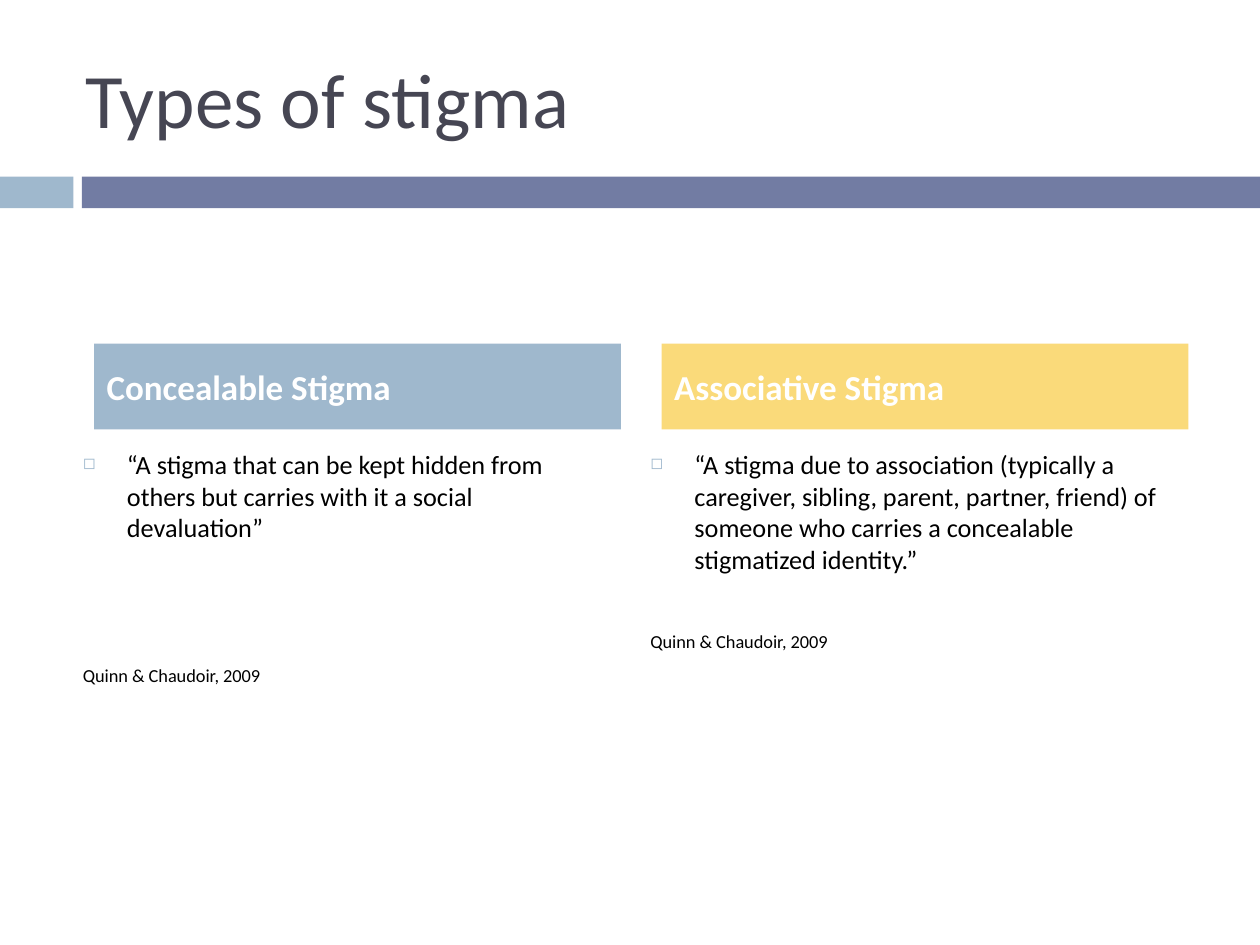
from lxml.etree import SubElement
from pptx import Presentation
from pptx.dml.color import RGBColor as Rgb
from pptx.enum.shapes import MSO_SHAPE as Kind
from pptx.enum.text import MSO_ANCHOR as Anchor, PP_ALIGN as Align
from pptx.oxml.ns import qn
from pptx.util import Cm, Pt

FONT = "Calibri"
BLUE, PLUM, GOLD = "9FB8CD", "727CA3", "FADA7A"
INK, BLACK, WHITE = "464653", "000000", "FFFFFF"
CITE = "Quinn & Chaudoir, 2009"
COLS = [
    (1.9, BLUE, "Concealable Stigma",
     "“A stigma that can be kept hidden from others but carries with it "
     "a social devaluation”", 69),
    (13.34, GOLD, "Associative Stigma",
     "“A stigma due to association (typically a caregiver, sibling, parent, "
     "partner, friend) of someone who carries a concealable stigmatized "
     "identity.”", 32),
]


def color(code):
    """Turn a hex string into a colour."""
    return Rgb.from_string(code)


def add_bar(slide, x, y, wide, high, fill):
    """Add a plain filled rectangle."""
    bar = slide.shapes.add_shape(Kind.RECTANGLE, Cm(x), Cm(y), Cm(wide), Cm(high))
    bar.shadow.inherit = False
    bar.fill.solid()
    bar.fill.fore_color.rgb = color(fill)
    bar.line.fill.background()
    return bar


def add_box(slide, x, y, wide, high):
    """Add a wrapping text box and return its frame."""
    frame = slide.shapes.add_textbox(Cm(x), Cm(y), Cm(wide), Cm(high)).text_frame
    frame.word_wrap = True
    return frame


def add_run(para, text, size, ink, bold=False):
    """Write one left-aligned run in a paragraph."""
    para.alignment = Align.LEFT
    run = para.add_run()
    run.text = text
    font = run.font
    font.name, font.size, font.bold = FONT, Pt(size), bold
    font.color.rgb = color(ink)


def add_bullet(para, ink):
    """Give a paragraph a small square bullet and a hanging indent."""
    props = para._p.get_or_add_pPr()
    props.set("marL", str(Cm(0.89)))
    props.set("indent", str(-Cm(0.89)))
    tint = SubElement(props, qn("a:buClr"))
    SubElement(tint, qn("a:srgbClr"), val=ink)
    SubElement(props, qn("a:buSzPct"), val="60000")
    SubElement(props, qn("a:buChar"), char="◻")


def add_column(slide, x, fill, head, quote, gap):
    """Add a heading bar with its quote and citation below."""
    bar = add_bar(slide, x, 6.93, 10.62, 1.73, fill)
    frame = bar.text_frame
    frame.word_wrap = True
    frame.vertical_anchor = Anchor.MIDDLE
    add_run(frame.paragraphs[0], head, 20, WHITE, True)

    body = add_box(slide, x - 0.48, 8.92, 11.1, 6.43)
    para = body.paragraphs[0]
    add_bullet(para, BLUE)
    add_run(para, quote, 15, BLACK)
    cite = body.add_paragraph()
    cite.space_before = Pt(gap)
    add_run(cite, CITE, 10.5, BLACK)


def main():
    """Build and save the slide."""
    deck = Presentation()
    deck.slide_width, deck.slide_height = Cm(25.4), Cm(19.05)
    slide = deck.slides.add_slide(deck.slide_layouts[6])
    add_bar(slide, 0, 3.56, 1.48, 0.64, BLUE)
    add_bar(slide, 1.65, 3.56, 23.75, 0.64, PLUM)
    title = add_box(slide, 1.48, 0.76, 22.65, 2.41)
    title.vertical_anchor = Anchor.MIDDLE
    add_run(title.paragraphs[0], "Types of stigma", 44, INK)
    for col in COLS:
        add_column(slide, *col)
    deck.save("out.pptx")


if __name__ == "__main__":
    main()
